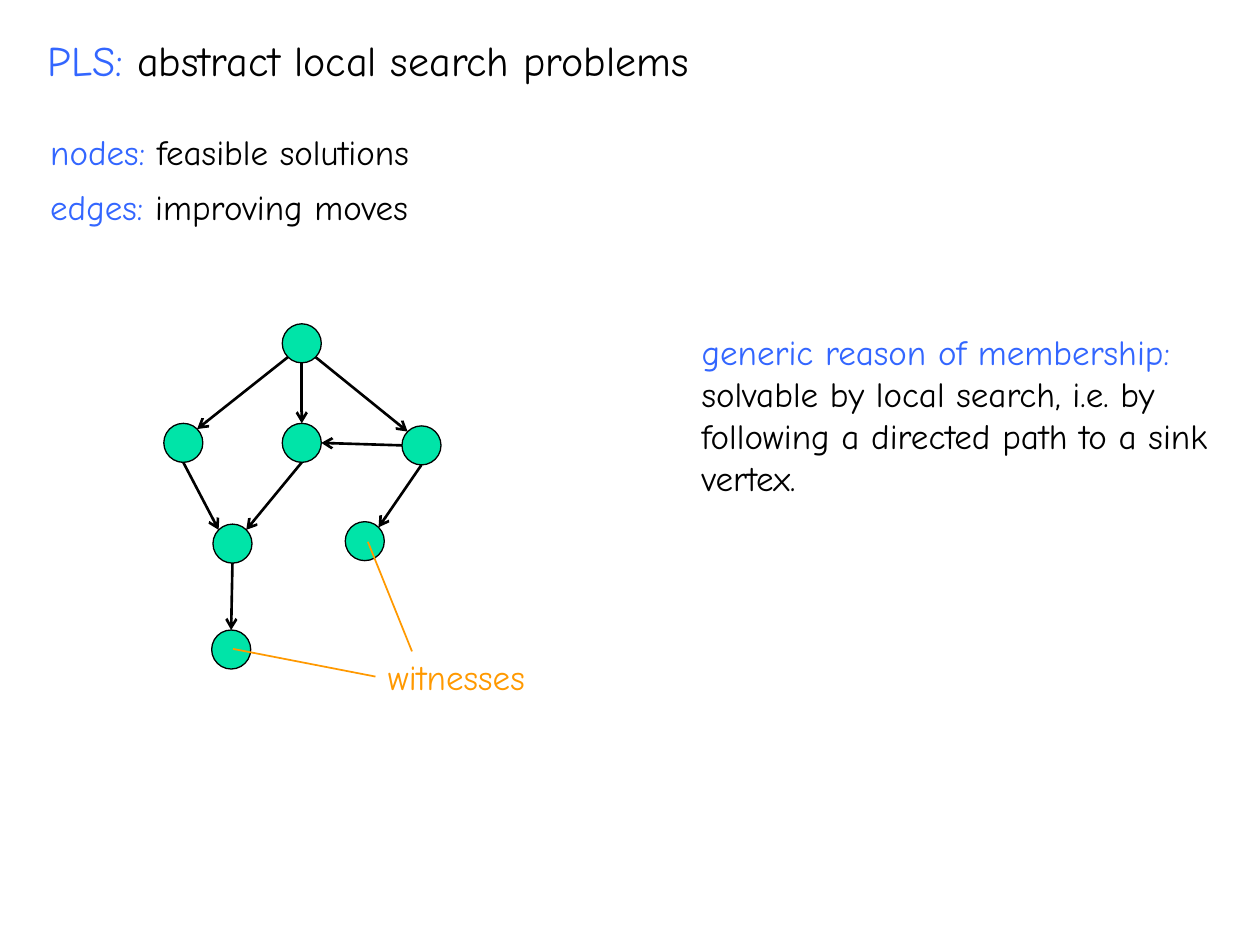
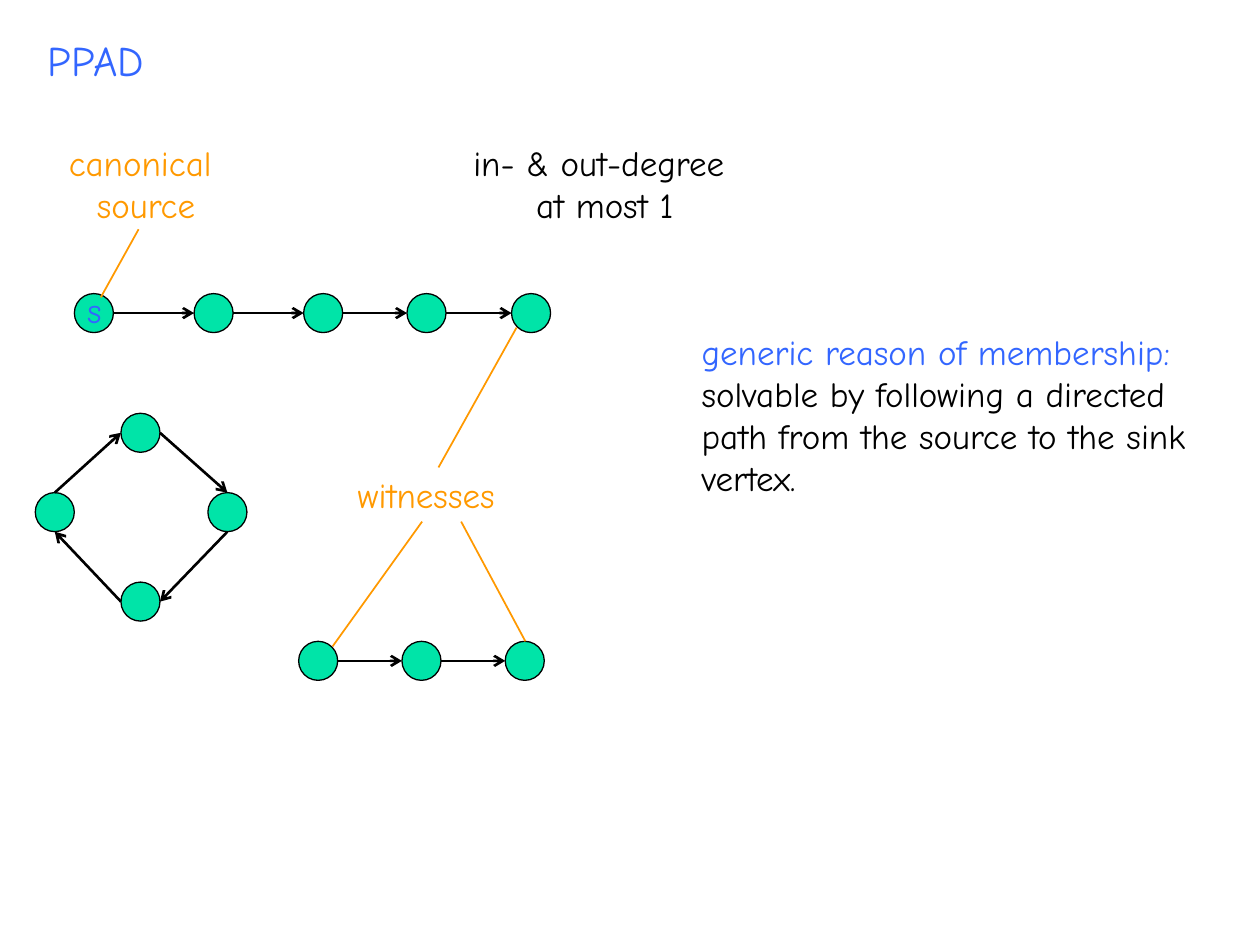
from math import sqrt
from lxml.etree import SubElement
from pptx import Presentation
from pptx.dml.color import RGBColor
from pptx.enum.shapes import MSO_CONNECTOR, MSO_SHAPE
from pptx.enum.text import MSO_ANCHOR, MSO_AUTO_SIZE, PP_ALIGN
from pptx.oxml.ns import qn
from pptx.util import Inches, Pt

COLORS = {"accent": "3366FF", "ink": "000000", "note": "FF9900", "node": "00E4A8"}
FONT = "Comic Neue"
D = 0.31  # node diameter
REASON = ("generic reason of membership:", "accent")
BREAK = ("\n", None)


def chain(prefix, left, top, step, count):
    """Evenly spaced row of nodes."""
    return {f"{prefix}{i}": (left + i * step, top) for i in range(count)}


def row_edges(prefix, count):
    return [(f"{prefix}{i}", "r", f"{prefix}{i + 1}", "l") for i in range(count - 1)]


# Content: nodes are (left, top); edges are (node, site, node, site);
# texts are (box, alignment, wrap, paragraphs of (text, colour) runs)
SLIDES = [
    {
        "title": [("PLS:", "accent"), (" abstract local search problems", "ink")],
        "title_width": 5.83,
        "nodes": {
            "start": (2.24, 2.57),
            "left": (1.3, 3.36), "mid": (2.24, 3.36), "right": (3.19, 3.38),
            "join": (1.69, 4.16), "leaf": (2.74, 4.14),
            "sink": (1.68, 5.0),
        },
        "edges": [
            ("start", "bl", "left", "tr"), ("start", "b", "mid", "t"),
            ("start", "br", "right", "tl"), ("left", "b", "join", "tl"),
            ("mid", "b", "join", "tr"), ("right", "l", "mid", "r"),
            ("right", "b", "leaf", "tr"), ("join", "b", "sink", "t"),
        ],
        "texts": [
            ((0.3, 0.99, 3.41, 0.44), "left", False,
             [[("nodes: ", "accent"), ("feasible solutions", "ink")]]),
            ((0.3, 1.42, 3.25, 0.44), "left", False,
             [[("edges: ", "accent"), ("improving moves", "ink")]]),
            ((2.98, 5.15, 1.47, 0.44), "left", False, [[("witnesses", "note")]]),
            ((5.47, 2.57, 4.23, 0.77), "left", True,
             [[REASON, BREAK,
               ("solvable by local search, i.e. by following a directed path "
                "to a sink vertex.", "ink")]]),
        ],
        "pointers": [((2.92, 4.3), (3.27, 5.17)), ((1.85, 5.15), (2.98, 5.37))],
    },
    {
        "title": [("PPAD", "accent")],
        "title_width": 1.04,
        "nodes": {
            "path0": (0.59, 2.33), "path1": (1.54, 2.33), "path2": (2.41, 2.33),
            "path3": (3.23, 2.33), "path4": (4.06, 2.33),
            "north": (0.96, 3.28), "east": (1.65, 3.91),
            "south": (0.96, 4.62), "west": (0.28, 3.91),
            **chain("short", 2.37, 5.09, 0.82, 3),
        },
        "edges": [
            *row_edges("path", 5), *row_edges("short", 3),
            ("west", "t", "north", "l"), ("north", "r", "east", "t"),
            ("east", "b", "south", "r"), ("south", "l", "west", "b"),
        ],
        "texts": [
            ((0.43, 1.07, 1.46, 0.77), "center", False,
             [[("canonical ", "note")], [("source", "note")]]),
            ((3.58, 1.07, 2.44, 0.77), "center", False,
             [[("in- & out-degree ", "ink")], [("at most 1", "ink")]]),
            ((2.74, 3.71, 1.47, 0.44), "left", False, [[("witnesses", "note")]]),
            ((0.58, 2.24, 0.34, 0.44), "center", False, [[("s", "accent")]]),
            ((5.47, 2.57, 4.33, 0.77), "left", True,
             [[REASON, BREAK,
               ("solvable by following a directed path from the source "
                "to the sink vertex.", "ink")]]),
        ],
        "pointers": [
            ((1.1, 1.82), (0.8, 2.36)), ((4.1, 2.6), (3.48, 3.71)),
            ((3.66, 4.14), (4.17, 5.09)), ((3.35, 4.14), (2.64, 5.13)),
        ],
    },
]

ALIGN = {"left": PP_ALIGN.LEFT, "center": PP_ALIGN.CENTER}
SIDES = {"t": (0, -1), "b": (0, 1), "l": (-1, 0), "r": (1, 0)}


def rgb(name):
    return RGBColor.from_string(COLORS[name])


def site_point(node, site):
    """Point on a node's rim; two letters name a diagonal."""
    dx, dy = (sum(SIDES[c][axis] for c in site) for axis in (0, 1))
    reach = D / 2 / sqrt(len(site))
    return node[0] + D / 2 + dx * reach, node[1] + D / 2 + dy * reach


def write(tf, paragraphs, size, align="left", wrap=False):
    tf.word_wrap = wrap
    tf.auto_size = MSO_AUTO_SIZE.NONE if wrap else MSO_AUTO_SIZE.SHAPE_TO_FIT_TEXT
    tf.vertical_anchor = MSO_ANCHOR.TOP
    for i, runs in enumerate(paragraphs):
        p = tf.add_paragraph() if i else tf.paragraphs[0]
        p.alignment = ALIGN[align]
        for text, color in runs:
            if color is None:
                p.add_line_break()
                continue
            r = p.add_run()
            r.text = text
            r.font.name, r.font.size = FONT, Pt(size)
            r.font.color.rgb = rgb(color)


def add_title(s, runs, width):
    sp = s.shapes.title
    sp.left, sp.top, sp.width, sp.height = map(Inches, (0.28, 0.22, width, 0.5))
    write(sp.text_frame, [runs], 24)


def add_node(s, left, top):
    sp = s.shapes.add_shape(MSO_SHAPE.OVAL, *map(Inches, (left, top, D, D)))
    sp.shadow.inherit = False
    sp.fill.solid()
    sp.fill.fore_color.rgb = rgb("node")
    sp.line.color.rgb = rgb("ink")
    sp.line.width = Pt(0.75)


def add_line(s, start, end, color, width, arrow=False):
    cx = s.shapes.add_connector(MSO_CONNECTOR.STRAIGHT, *map(Inches, (*start, *end)))
    cx.line.color.rgb = rgb(color)
    cx.line.width = Pt(width)
    if arrow:
        SubElement(cx.line._get_or_add_ln(), qn("a:tailEnd"), type="arrow")
    SubElement(cx._element.spPr, qn("a:effectLst"))


def build_slide(prs, content):
    s = prs.slides.add_slide(prs.slide_layouts[5])
    add_title(s, content["title"], content["title_width"])
    # Graph
    nodes = content["nodes"]
    for left, top in nodes.values():
        add_node(s, left, top)
    for a, a_site, b, b_site in content["edges"]:
        add_line(s, site_point(nodes[a], a_site), site_point(nodes[b], b_site),
                 "ink", 1.5, arrow=True)
    # Labels and their pointers
    for box, align, wrap, paragraphs in content["texts"]:
        tb = s.shapes.add_textbox(*map(Inches, box))
        write(tb.text_frame, paragraphs, 20, align, wrap)
    for start, end in content["pointers"]:
        add_line(s, start, end, "note", 1)


def main():
    prs = Presentation()
    prs.slide_width, prs.slide_height = Inches(10), Inches(7.5)
    for content in SLIDES:
        build_slide(prs, content)
    prs.save("out.pptx")


if __name__ == "__main__":
    main()
